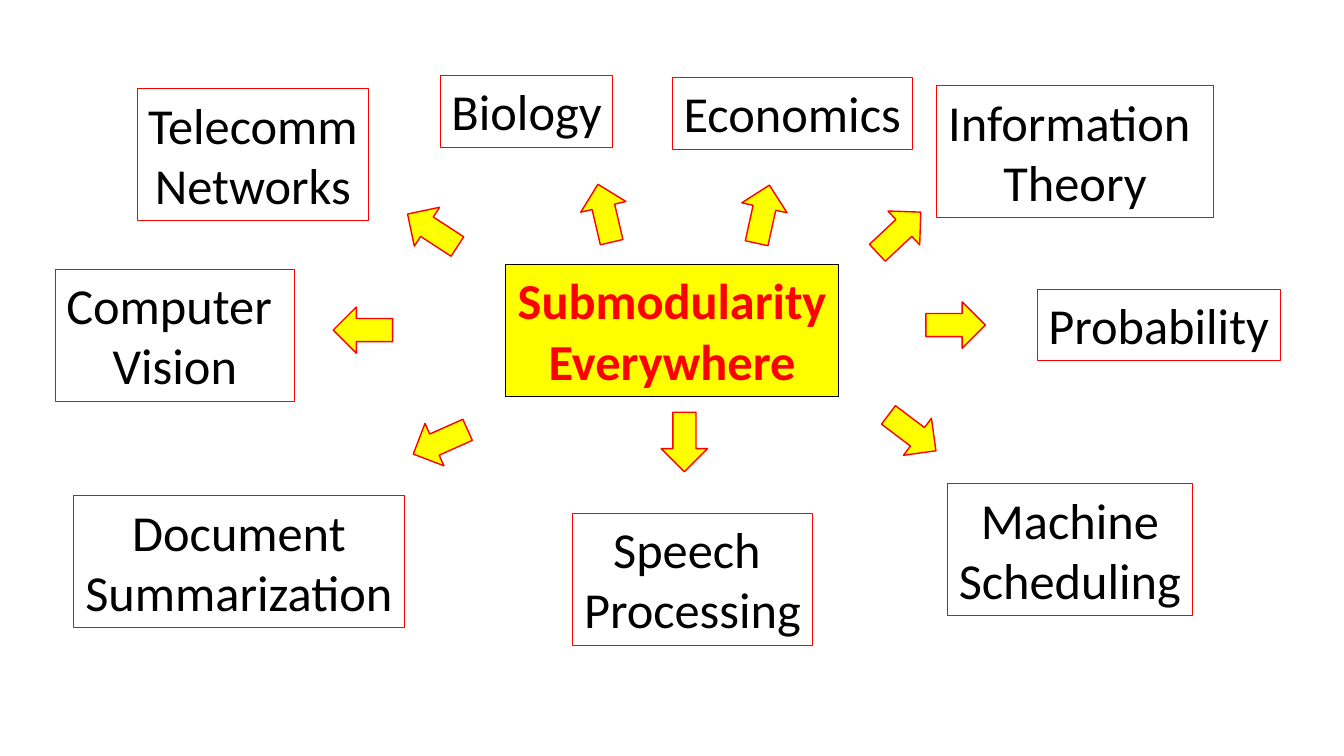
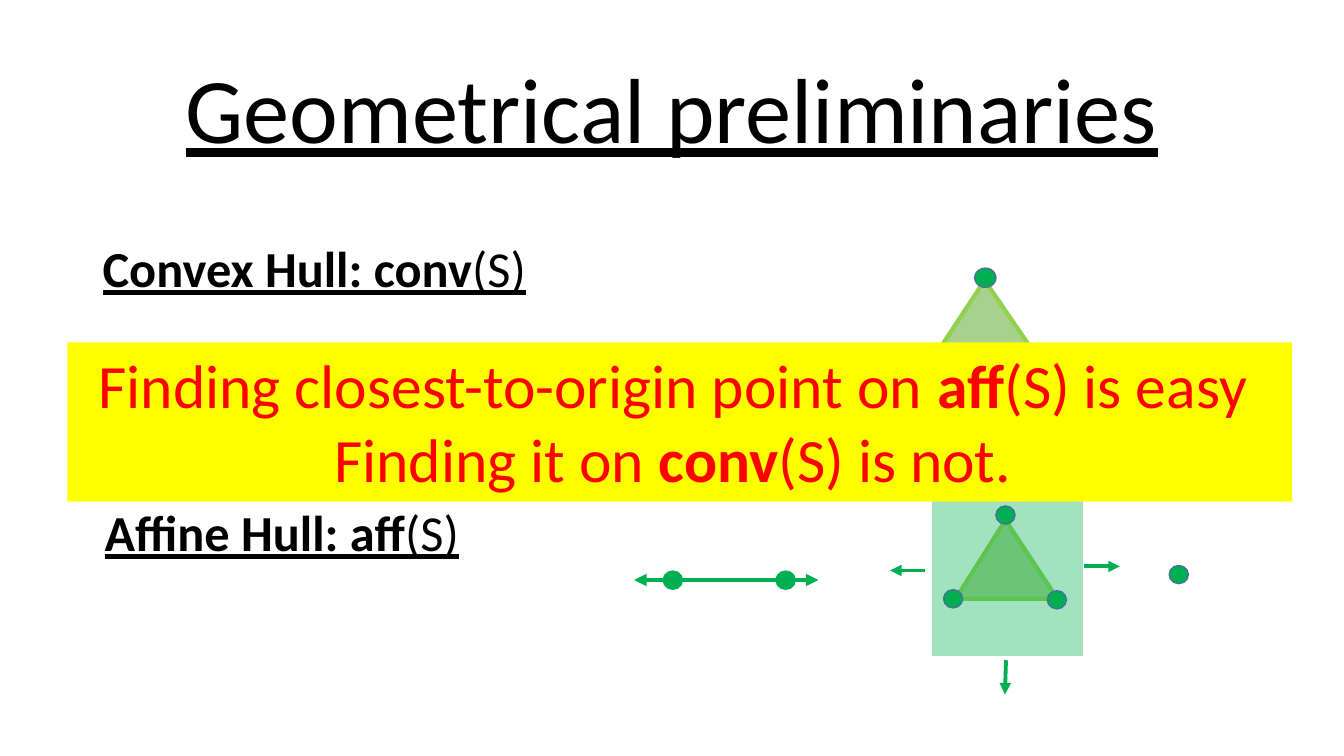
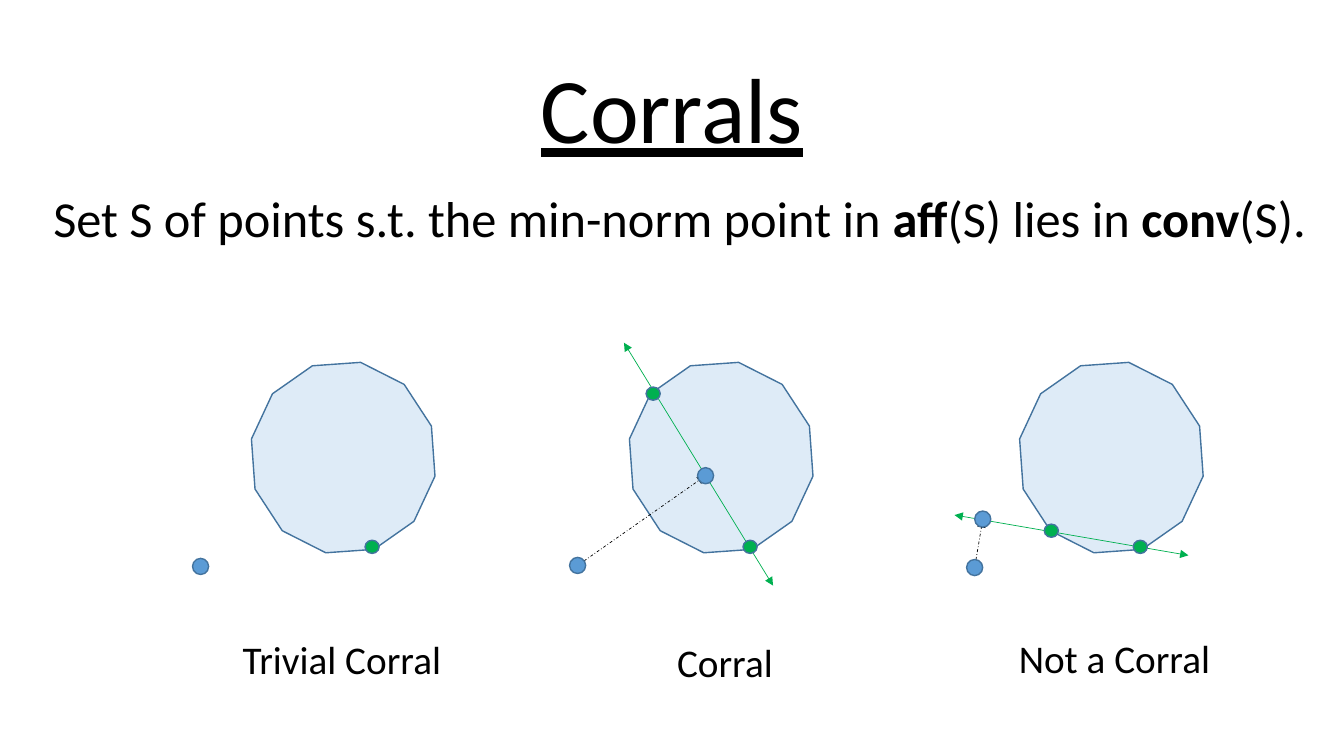
"""Build three slides on submodularity, hulls and corrals."""
from dataclasses import dataclass

import lxml.etree
import pptx
import pptx.dml.color
import pptx.enum.dml
import pptx.enum.shapes
import pptx.enum.text
import pptx.oxml.ns
import pptx.shapes.autoshape
import pptx.shapes.base
import pptx.slide
import pptx.util

Pt = pptx.util.Pt
Color = pptx.dml.color.RGBColor
Kind = pptx.enum.shapes.MSO_SHAPE
Align = pptx.enum.text.PP_ALIGN
Anchor = pptx.enum.text.MSO_ANCHOR
qn = pptx.oxml.ns.qn

FONT = "Calibri"
BLACK = Color(0x00, 0x00, 0x00)
WHITE = Color(0xFF, 0xFF, 0xFF)
RED = Color(0xFF, 0x00, 0x00)
YELLOW = Color(0xFF, 0xFF, 0x00)
GREEN = Color(0x00, 0xB0, 0x50)
LIME = Color(0x92, 0xD0, 0x50)
SAGE = Color(0xA9, 0xD1, 0x8E)
BLUE = Color(0x5B, 0x9B, 0xD5)
PALE_BLUE = Color(0xDE, 0xEB, 0xF7)
OUTLINE = Color(0x43, 0x73, 0x9E)

Point = tuple[float, float]


@dataclass(frozen=True)
class Frame:
    left: float
    top: float
    width: float
    height: float


@dataclass(frozen=True)
class Span:
    text: str
    bold: bool = False


@dataclass(frozen=True)
class Style:
    size: float
    color: Color = BLACK
    align: Align = Align.LEFT
    underline: bool = False


@dataclass(frozen=True)
class Topic:
    lines: tuple[str, ...]
    corner: Point
    width: float
    arrow: Point
    angle: float


@dataclass(frozen=True)
class Panel:
    caption: str
    caption_frame: Frame
    left: float
    origin: Point
    vertex: Point | None = None
    hull_line: tuple[Point, Point] | None = None
    foot: Point | None = None


Lines = list[list[Span]]

TOPICS = (
    Topic(("Telecomm", "Networks"), (97.9, 63.4), 165.6, (308.9, 164.5), 123.1),
    Topic(("Biology",), (314.6, 54), 123.1, (432, 152.3), 166.7),
    Topic(("Economics",), (480.2, 55.4), 171.4, (545, 153), 192.4),
    Topic(("Information ", "Theory"), (668.9, 61.2), 198, (642.2, 166), 226.9),
    Topic(("Probability",), (740.9, 206.6), 173.5, (682.6, 232.2), 270),
    Topic(("Machine", "Scheduling"), (676.8, 345.6), 175, (651.6, 309.2), 307.1),
    Topic(("Speech ", "Processing"), (409, 366.5), 171.4, (488.9, 315.7), 0),
    Topic(("Document", "Summarization"), (52.6, 354.2), 236.2, (314.6, 315.7), 65.9),
    Topic(("Computer ", "Vision"), (39.6, 192.2), 170.6, (259.2, 235.8), 90),
)

PANELS = (
    Panel("Trivial Corral", Frame(166.3, 450, 160, 41), 180.7, (143.3, 404.6)),
    Panel("Corral", Frame(476.6, 452.2, 95, 41), 450.7, (412.6, 403.9),
          (466.6, 281.2), ((445.7, 244.8), (552.2, 418.3)), (504, 339.8)),
    Panel("Not a Corral", Frame(720.7, 449.3, 160, 41), 729.4, (696.2, 405.4),
          (751, 379.1), ((681.8, 367.9), (848.9, 396.7)), (702, 370.8)),
)


def centred(center: Point, width: float, height: float) -> Frame:
    return Frame(center[0] - width / 2, center[1] - height / 2, width, height)


def text_height(line_count: int) -> float:
    return 8 + 43.2 * line_count


def write(shape: pptx.shapes.base.BaseShape, lines: Lines, style: Style, wrap: bool = False) -> None:
    frame = shape.text_frame
    frame.word_wrap = wrap
    frame.vertical_anchor = Anchor.TOP
    for index, spans in enumerate(lines):
        para = frame.add_paragraph() if index else frame.paragraphs[0]
        para.alignment = style.align
        for span in spans:
            run = para.add_run()
            run.text = span.text
            run.font.name = FONT
            run.font.size = Pt(style.size)
            run.font.bold = span.bold
            run.font.underline = style.underline
            run.font.color.rgb = style.color


def add_text(page: pptx.slide.Slide, frame: Frame, lines: Lines, style: Style,
             wrap: bool = False) -> pptx.shapes.autoshape.Shape:
    box = page.shapes.add_textbox(Pt(frame.left), Pt(frame.top), Pt(frame.width), Pt(frame.height))
    write(box, lines, style, wrap)
    return box


def add_title(page: pptx.slide.Slide, text: str) -> None:
    box = add_text(page, Frame(66, 28.8, 828, 104.4), [[Span(text)]],
                   Style(66, align=Align.CENTER, underline=True), wrap=True)
    box.text_frame.vertical_anchor = Anchor.MIDDLE
    box.text_frame.paragraphs[0].line_spacing = 0.9


def add_shape(page: pptx.slide.Slide, kind: Kind, frame: Frame, fill: Color | None,
              line: Color | None, weight: float = 1, angle: float = 0) -> pptx.shapes.autoshape.Shape:
    shape = page.shapes.add_shape(kind, Pt(frame.left), Pt(frame.top), Pt(frame.width), Pt(frame.height))
    shape.shadow.inherit = False
    shape.rotation = angle
    if fill is None:
        shape.fill.background()
    else:
        shape.fill.solid()
        shape.fill.fore_color.rgb = fill
    if line is None:
        shape.line.fill.background()
    else:
        shape.line.color.rgb = line
        shape.line.width = Pt(weight)
    return shape


def add_dot(page: pptx.slide.Slide, center: Point, width: float, height: float,
            fill: Color = GREEN, line: Color = OUTLINE) -> None:
    add_shape(page, Kind.OVAL, centred(center, width, height), fill, line)


def add_arrow(page: pptx.slide.Slide, start: Point, end: Point, weight: float, color: Color = GREEN,
              both: bool = False, dashed: bool = False) -> None:
    arrow = page.shapes.add_connector(pptx.enum.shapes.MSO_CONNECTOR.STRAIGHT,
                                      Pt(start[0]), Pt(start[1]), Pt(end[0]), Pt(end[1]))
    arrow.line.color.rgb = color
    arrow.line.width = Pt(weight)
    if dashed:
        arrow.line.dash_style = pptx.enum.dml.MSO_LINE.DASH_DOT
    properties = arrow.element.spPr
    outline = properties.find(qn("a:ln"))
    for tag in ("a:headEnd", "a:tailEnd") if both else ("a:tailEnd",):
        lxml.etree.SubElement(outline, qn(tag), type="triangle")
    lxml.etree.SubElement(properties, qn("a:effectLst"))


def add_label(page: pptx.slide.Slide, lines: tuple[str, ...], corner: Point, width: float,
              fill: Color | None, line: Color, color: Color, bold: bool) -> None:
    frame = Frame(*corner, width, text_height(len(lines)))
    box = add_shape(page, Kind.RECTANGLE, frame, fill, line, 0.75)
    write(box, [[Span(text, bold)] for text in lines], Style(36, color, Align.CENTER))


def build_topics(page: pptx.slide.Slide) -> None:
    add_label(page, ("Submodularity", "Everywhere"), (361.4, 189), 237.6, YELLOW, BLACK, RED, True)
    for topic in TOPICS:
        add_label(page, topic.lines, topic.corner, topic.width, None, RED, BLACK, False)
        add_shape(page, Kind.DOWN_ARROW, centred(topic.arrow, 33.1, 42.5), YELLOW, RED, angle=topic.angle)


def build_hulls(page: pptx.slide.Slide) -> None:
    add_title(page, "Geometrical preliminaries")
    heading = Style(36, underline=True)
    for text, frame in (("Affine Hull: aff", Frame(67.7, 354.2, 290, text_height(1))),
                        ("Convex Hull: conv", Frame(66.2, 165.6, 330, text_height(1)))):
        add_text(page, frame, [[Span(text, True), Span("(S)")]], heading)

    for frame in (Frame(663.1, 200.2, 82.1, 61.2), Frame(682.6, 371.5, 72.7, 56.2)):
        triangle = add_shape(page, Kind.ISOSCELES_TRIANGLE, frame, SAGE, LIME, 3)
        triangle.adjustments[0] = 0.49
    add_dot(page, (703.8, 198.4), 15.1, 13.7)

    plane = add_shape(page, Kind.RECTANGLE, Frame(665.3, 338.4, 108.7, 131), GREEN, WHITE)
    plane_color = plane.element.spPr.find(qn("a:solidFill"))[0]
    lxml.etree.SubElement(plane_color, qn("a:alpha"), val="36000")

    for center in ((842, 410.4), (718.2, 367.9), (754.9, 428.4), (680.8, 427.7)):
        add_dot(page, center, 13.7, 13)
    for center in ((480.6, 414.4), (561.2, 414.4)):
        add_dot(page, center, 13.7, 13, line=GREEN)
    add_arrow(page, (452.9, 414.3), (584.6, 414.3), 3, both=True)
    for start, end in (((774, 404.6), (799.9, 404.6)),
                       ((718.6, 471.6), (717.8, 496.1)),
                       ((661, 407.5), (635.8, 407.5))):
        add_arrow(page, start, end, 2.75)

    banner = add_shape(page, Kind.RECTANGLE, Frame(48.2, 244.5, 874.8, 113.8), YELLOW, None)
    write(banner, [
        [Span("Finding closest-to-origin point on "), Span("aff", True), Span("(S) is easy ")],
        [Span("Finding it on "), Span("conv", True), Span("(S) is not. ")],
    ], Style(44, RED, Align.CENTER))


def build_corrals(page: pptx.slide.Slide) -> None:
    add_title(page, "Corrals")
    add_text(page, Frame(31, 130.3, 922, text_height(1)), [[
        Span("Set S of points s.t. the min-norm point in "), Span("aff", True),
        Span("(S) lies in "), Span("conv", True), Span("(S)."),
    ]], Style(36), wrap=True)
    for panel in PANELS:
        add_shape(page, Kind.DODECAGON, Frame(panel.left, 259.9, 128.9, 133.9),
                  PALE_BLUE, OUTLINE, angle=355.9)
        if panel.hull_line:
            add_arrow(page, *panel.hull_line, 0.5, both=True)
        if panel.foot:
            add_arrow(page, panel.origin, panel.foot, 0.5, BLACK, dashed=True)
        for vertex in ((panel.left + 85.1, 390.6), panel.vertex):
            if vertex:
                add_dot(page, vertex, 10.1, 9.4)
        for point in (panel.origin, panel.foot):
            if point:
                add_dot(page, point, 11.5, 11.5, BLUE)
        add_text(page, panel.caption_frame, [[Span(panel.caption)]], Style(28))


def main() -> None:
    deck = pptx.Presentation()
    deck.slide_width, deck.slide_height = Pt(960), Pt(540)
    for build in (build_topics, build_hulls, build_corrals):
        build(deck.slides.add_slide(deck.slide_layouts[6]))
    deck.save("out.pptx")


if __name__ == "__main__":
    main()
